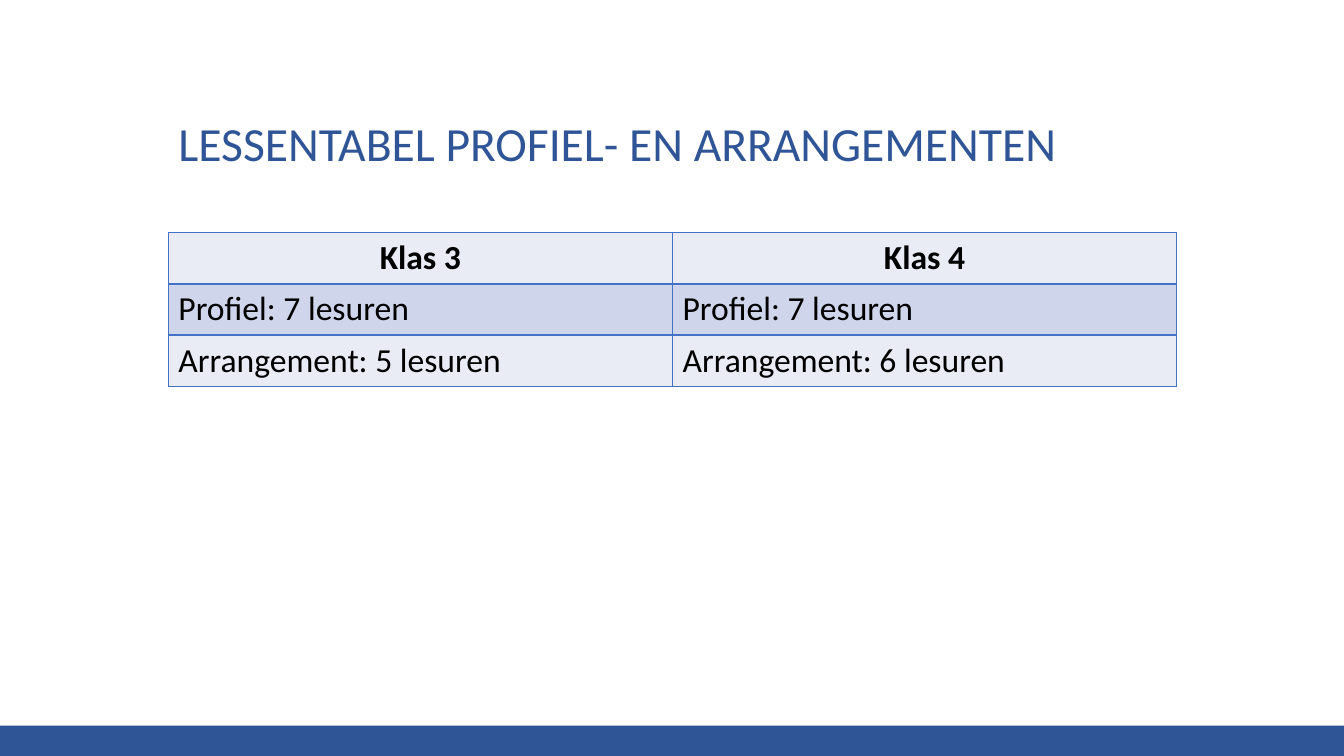
import pptx
import pptx.dml.color
import pptx.enum.shapes
import pptx.enum.text
import pptx.oxml
import pptx.oxml.ns
import pptx.util

Inches, Pt = pptx.util.Inches, pptx.util.Pt
RGBColor = pptx.dml.color.RGBColor

HEADING = "LESSENTABEL PROFIEL- EN ARRANGEMENTEN"
LESSONS = [
    ("Klas 3", "Klas 4"),
    ("Profiel: 7 lesuren", "Profiel: 7 lesuren"),
    ("Arrangement: 5 lesuren", "Arrangement: 6 lesuren"),
]

FONT = "Calibri"
NAVY = RGBColor(0x2F, 0x55, 0x97)
BORDER = RGBColor(0x44, 0x72, 0xC4)
BLACK = RGBColor(0, 0, 0)
BANDS = [RGBColor(0xE9, 0xEB, 0xF5), RGBColor(0xCF, 0xD5, 0xEA)]

SLIDE_W, SLIDE_H = 13.33, 7.5
LEFT, WIDTH = 1.67, 10
TABLE_TOP, ROW_H = 2.31, 0.5
FOOTER_H = 0.3


def add_run(paragraph, wording, size, color, bold=False):
    run = paragraph.add_run()
    run.text = wording
    run.font.name = FONT
    run.font.size = Pt(size)
    run.font.bold = bold
    run.font.color.rgb = color


def add_borders(cell):
    properties = cell._tc.get_or_add_tcPr()
    for position, side in enumerate(("lnL", "lnR", "lnT", "lnB")):
        line = pptx.oxml.parse_xml(
            f'<a:{side} {pptx.oxml.ns.nsdecls("a")} w="{Pt(1)}"><a:solidFill>'
            f'<a:srgbClr val="{BORDER}"/></a:solidFill></a:{side}>')
        properties.insert(position, line)


def add_footer_bar(slide):
    bar = slide.shapes.add_shape(
        pptx.enum.shapes.MSO_SHAPE.RECTANGLE, 0, Inches(SLIDE_H - FOOTER_H),
        Inches(SLIDE_W), Inches(FOOTER_H))
    bar.shadow.inherit = False
    bar.fill.solid()
    bar.fill.fore_color.rgb = NAVY
    bar.line.fill.background()


def add_heading(slide):
    heading = slide.shapes.title
    heading.left, heading.top = Inches(LEFT), Inches(0.5)
    heading.width, heading.height = Inches(WIDTH), Inches(1.25)
    frame = heading.text_frame
    frame.word_wrap = True
    frame.vertical_anchor = pptx.enum.text.MSO_ANCHOR.BOTTOM
    paragraph = frame.paragraphs[0]
    paragraph.alignment = pptx.enum.text.PP_ALIGN.LEFT
    paragraph.line_spacing = 0.9
    add_run(paragraph, HEADING, 34, NAVY)


def add_lesson_table(slide):
    lessons = slide.shapes.add_table(
        len(LESSONS), len(LESSONS[0]), Inches(LEFT), Inches(TABLE_TOP),
        Inches(WIDTH), Inches(ROW_H * len(LESSONS))).table
    for r, row in enumerate(LESSONS):
        for c, wording in enumerate(row):
            is_header = r == 0
            cell = lessons.cell(r, c)
            cell.fill.solid()
            cell.fill.fore_color.rgb = BANDS[r % 2]
            add_borders(cell)
            paragraph = cell.text_frame.paragraphs[0]
            if is_header:
                paragraph.alignment = pptx.enum.text.PP_ALIGN.CENTER
            add_run(paragraph, wording, 24, BLACK, is_header)


def main():
    deck = pptx.Presentation()
    deck.slide_width, deck.slide_height = Inches(SLIDE_W), Inches(SLIDE_H)
    slide = deck.slides.add_slide(deck.slide_layouts.get_by_name("Title Only"))
    add_footer_bar(slide)
    add_heading(slide)
    add_lesson_table(slide)
    deck.save("out.pptx")


if __name__ == "__main__":
    main()
